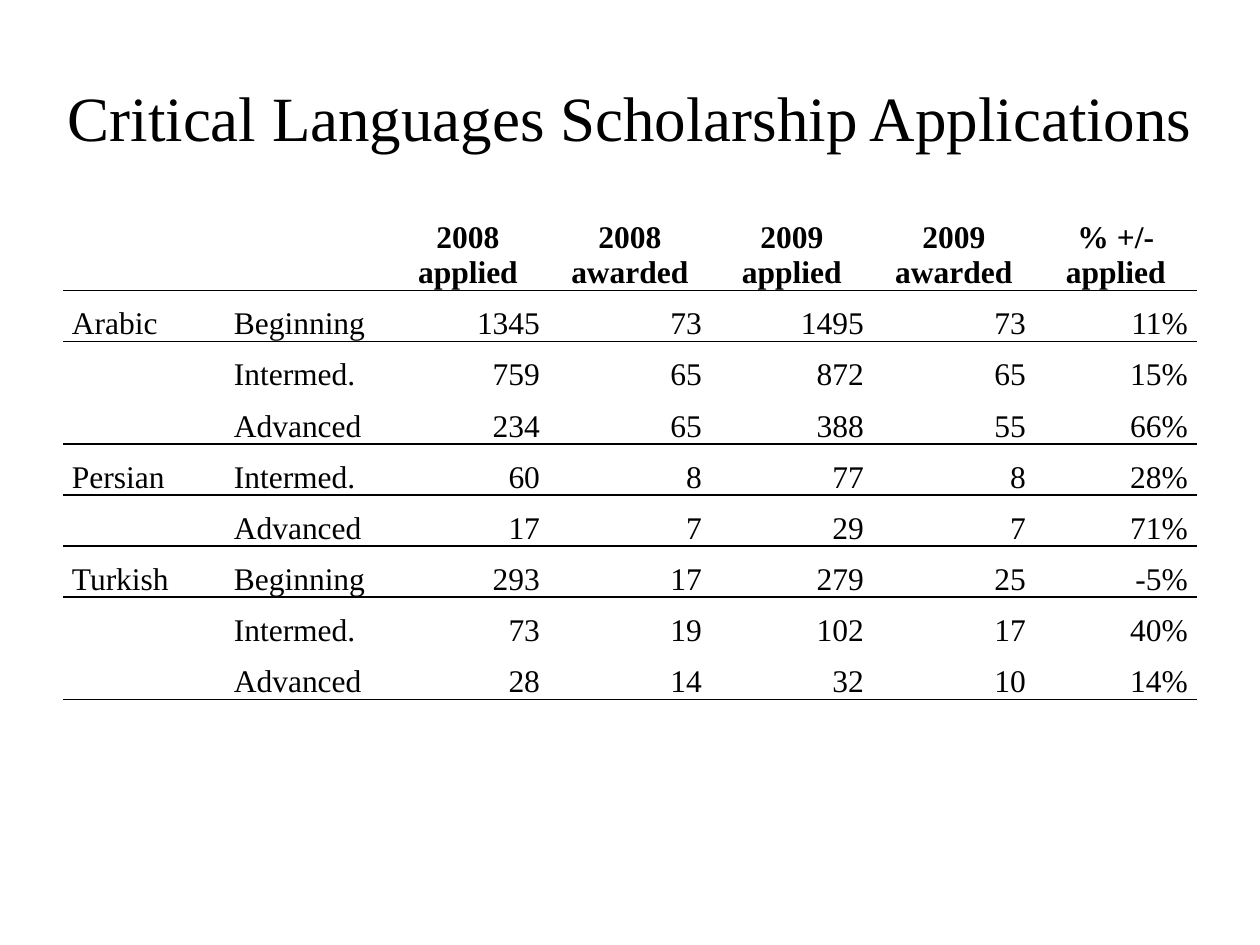
import pptx
import pptx.dml.color
import pptx.enum.text
import pptx.oxml
import pptx.oxml.ns
import pptx.util

BLACK = pptx.dml.color.RGBColor(0, 0, 0)
PLAIN_STYLE = "{2D5ABB26-0587-4C30-8999-92F81FD0307C}"
Cm = pptx.util.Cm
Align = pptx.enum.text.PP_ALIGN
Anchor = pptx.enum.text.MSO_ANCHOR

HEADINGS = ["", "", "2008 applied", "2008 awarded", "2009 applied", "2009 awarded", "% +/- applied"]
LANGUAGES = [
    [
        ["Arabic", "Beginning", "1345", "73", "1495", "73", "11%"],
        ["", "Intermed.", "759", "65", "872", "65", "15%"],
        ["", "Advanced", "234", "65", "388", "55", "66%"],
    ],
    [
        ["Persian", "Intermed.", "60", "8", "77", "8", "28%"],
        ["", "Advanced", "17", "7", "29", "7", "71%"],
    ],
    [
        ["Turkish", "Beginning", "293", "17", "279", "25", "-5%"],
        ["", "Intermed.", "73", "19", "102", "17", "40%"],
        ["", "Advanced", "28", "14", "32", "10", "14%"],
    ],
]


class SlideBuilder:
    """Hold the text style and the current slide, and add elements to it."""

    font_name = "Times New Roman"
    title_size = 36
    table_size = 18

    def __init__(self, slide):
        self.slide = slide

    def set_text(self, paragraph, text, size, alignment, bold=False):
        paragraph.text = text
        paragraph.alignment = alignment
        paragraph.font.name = self.font_name
        paragraph.font.size = pptx.util.Pt(size)
        paragraph.font.bold = bold
        paragraph.font.color.rgb = BLACK

    def title(self, text, left, top, width, height):
        shape = self.slide.shapes.title
        shape.left, shape.top, shape.width, shape.height = left, top, width, height
        frame = shape.text_frame
        frame.word_wrap = True
        frame.auto_size = pptx.enum.text.MSO_AUTO_SIZE.NONE
        frame.vertical_anchor = Anchor.MIDDLE
        self.set_text(frame.paragraphs[0], text, self.title_size, Align.CENTER)

    def border(self, cell, side):
        line = pptx.oxml.parse_xml(
            f'<a:{side} {pptx.oxml.ns.nsdecls("a")} w="12700"><a:solidFill>'
            f'<a:srgbClr val="{BLACK}"/></a:solidFill></a:{side}>'
        )
        cell._tc.get_or_add_tcPr().insert(0, line)

    def cell(self, cell, text, alignment, bold):
        cell.fill.background()
        cell.vertical_anchor = Anchor.BOTTOM
        cell.margin_left = cell.margin_right = Cm(0.18)
        cell.margin_top = cell.margin_bottom = 0
        self.set_text(cell.text_frame.paragraphs[0], text, self.table_size, alignment, bold)

    def table(self, groups, left, top, width, header_height, row_height):
        rows = [row for group in groups for row in group]
        height = header_height + row_height * (len(rows) - 1)
        frame = self.slide.shapes.add_table(len(rows), len(rows[0]), left, top, width, height)
        table = frame.table
        table.first_row = table.horz_banding = False
        table._tbl.tblPr.find(pptx.oxml.ns.qn("a:tableStyleId")).text = PLAIN_STYLE
        for index, row in enumerate(rows):
            table.rows[index].height = row_height if index else header_height
            for column, text in enumerate(row):
                if index == 0:
                    alignment = Align.CENTER
                else:
                    alignment = Align.LEFT if column < 2 else Align.RIGHT
                self.cell(table.cell(index, column), text, alignment, index == 0)
        last = -1
        for group in groups:
            last += len(group)
            for column in range(len(rows[0])):
                self.border(table.cell(last, column), "lnB")
                if last + 1 < len(rows):
                    self.border(table.cell(last + 1, column), "lnT")


def main():
    presentation = pptx.Presentation()
    presentation.slide_width, presentation.slide_height = Cm(25.4), Cm(19.05)
    builder = SlideBuilder(presentation.slides.add_slide(presentation.slide_layouts[5]))
    builder.title("Critical Languages Scholarship Applications", Cm(0.64), Cm(0.76), Cm(24.13), Cm(3.18))
    builder.table([[HEADINGS], *LANGUAGES], Cm(1.27), Cm(4.45), Cm(22.86), Cm(1.4), Cm(1.03))
    presentation.save("out.pptx")


if __name__ == "__main__":
    main()
